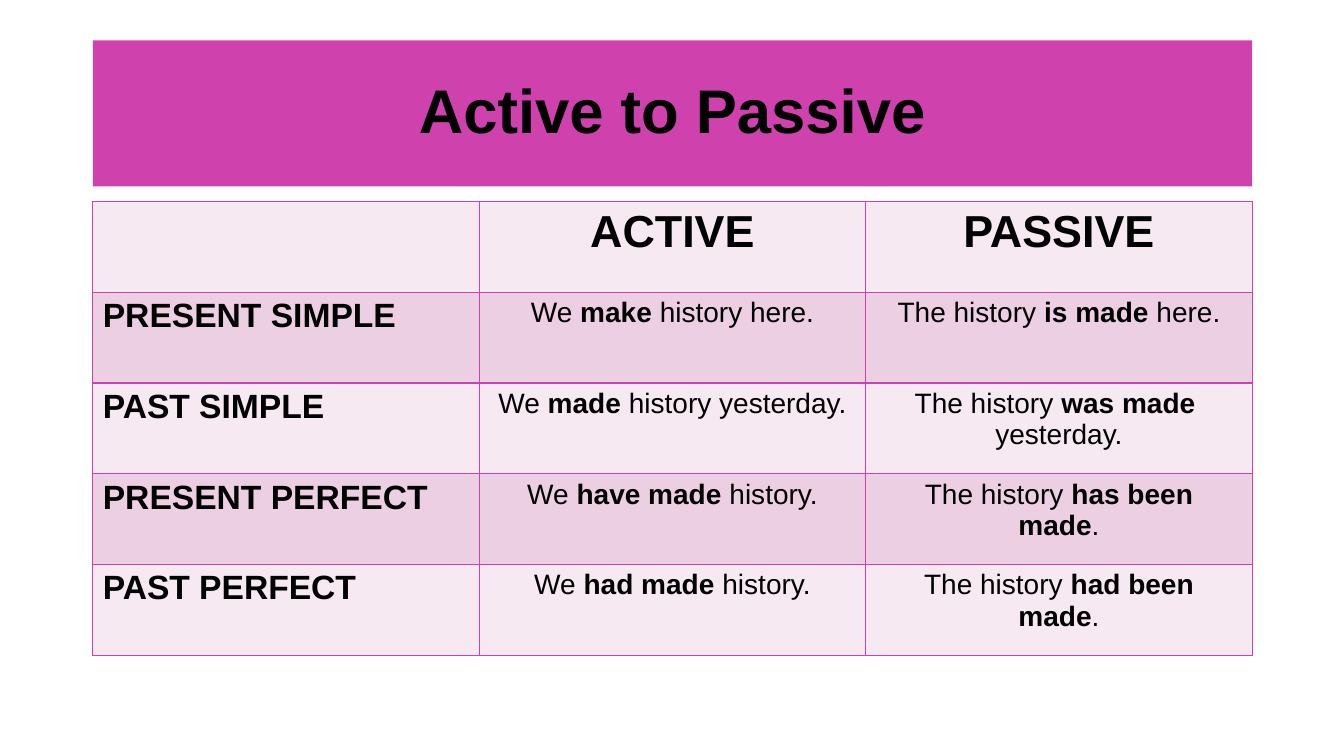
from lxml import etree
from pptx import Presentation
from pptx.dml.color import RGBColor
from pptx.enum.text import MSO_ANCHOR, PP_ALIGN
from pptx.oxml.ns import qn
from pptx.util import Inches, Pt

COLORS = {"magenta": "CF41AD", "light": "F6E9F1", "pink": "EDCFE3", "text": "000000"}
LEFT, WIDTH, ROW_HEIGHT = 0.92, 11.5, 0.9
ROWS = [
    ["", "*ACTIVE*", "*PASSIVE*"],
    ["*PRESENT SIMPLE*", "We *make *history here.", "The history *is made *here."],
    ["*PAST SIMPLE*", "We *made *history yesterday.", "The history *was made *\nyesterday."],
    ["*PRESENT PERFECT*", "We *have made *history.", "The history *has been*\n*made*."],
    ["*PAST PERFECT*", "We *had made *history.", "The history *had been*\n*made*."],
]


def style(font, size, bold):
    font.name = "Arial"
    font.size = Pt(size)
    font.bold = bold
    font.color.rgb = RGBColor.from_string(COLORS["text"])


def add_borders(cell):
    tc_pr = cell._tc.get_or_add_tcPr()
    for side in ("lnL", "lnR", "lnT", "lnB"):
        ln = etree.SubElement(tc_pr, qn(f"a:{side}"), w=str(Pt(1)))
        fill = etree.SubElement(ln, qn("a:solidFill"))
        etree.SubElement(fill, qn("a:srgbClr"), val=COLORS["magenta"])


prs = Presentation()
prs.slide_width, prs.slide_height = Inches(13.33), Inches(7.5)
s = prs.slides.add_slide(prs.slide_layouts[5])

title = s.shapes.title
title.left, title.top = Inches(LEFT), Inches(0.4)
title.width, title.height = Inches(WIDTH), Inches(1.45)
title.fill.solid()
title.fill.fore_color.rgb = RGBColor.from_string(COLORS["magenta"])
tf = title.text_frame
tf.text = "Active to Passive"
tf.vertical_anchor = MSO_ANCHOR.MIDDLE
p = tf.paragraphs[0]
p.alignment = PP_ALIGN.CENTER
p.line_spacing = 0.9
style(p.runs[0].font, 44, True)

table = s.shapes.add_table(
    len(ROWS), 3, Inches(LEFT), Inches(2), Inches(WIDTH), Inches(ROW_HEIGHT * len(ROWS))
).table
for i, row in enumerate(ROWS):
    for j, text in enumerate(row):
        cell = table.cell(i, j)
        add_borders(cell)
        cell.fill.solid()
        cell.fill.fore_color.rgb = RGBColor.from_string(COLORS["pink" if i % 2 else "light"])
        size = 32 if i == 0 else 24 if j == 0 else 20
        cell.text_frame.text = "\n" * text.count("\n")
        for p, line in zip(cell.text_frame.paragraphs, text.split("\n")):
            p.alignment = PP_ALIGN.CENTER if j else PP_ALIGN.LEFT
            for k, part in enumerate(line.split("*")):
                if part:
                    r = p.add_run()
                    r.text = part
                    style(r.font, size, k % 2 == 1)

prs.save("out.pptx")
